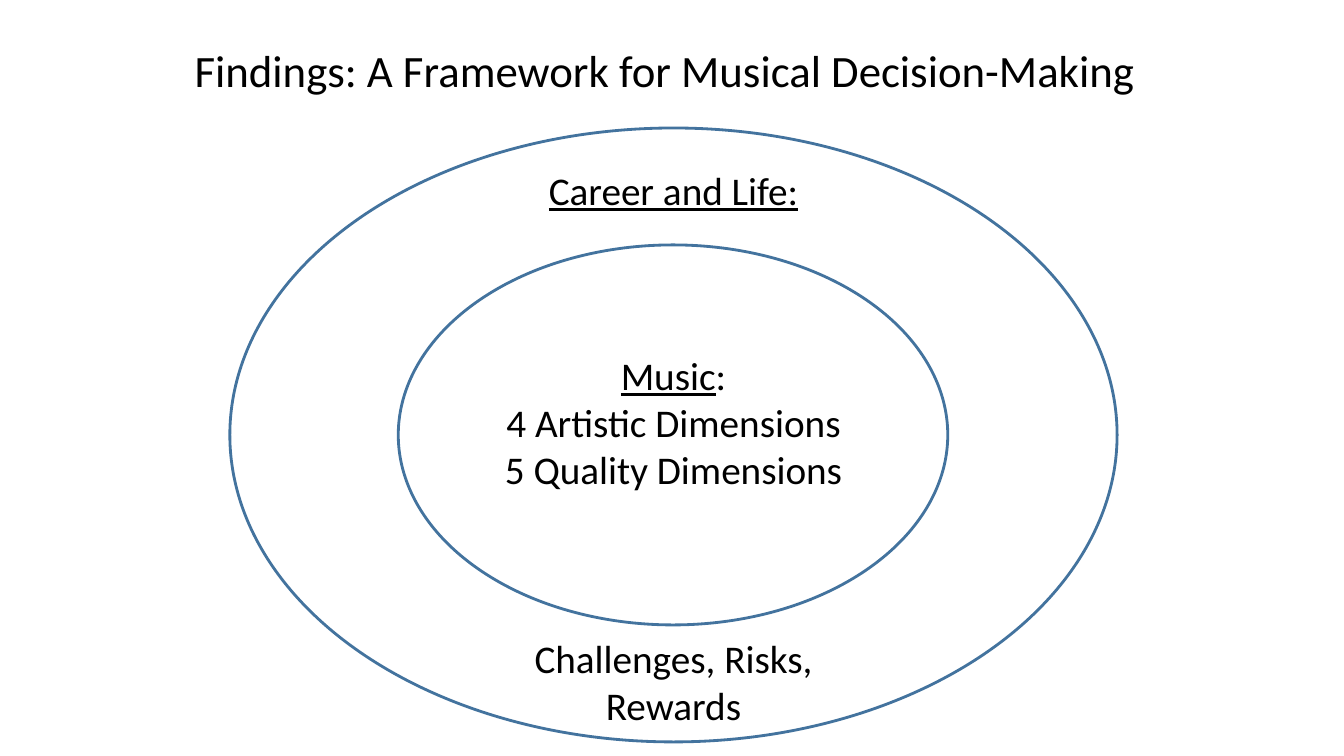
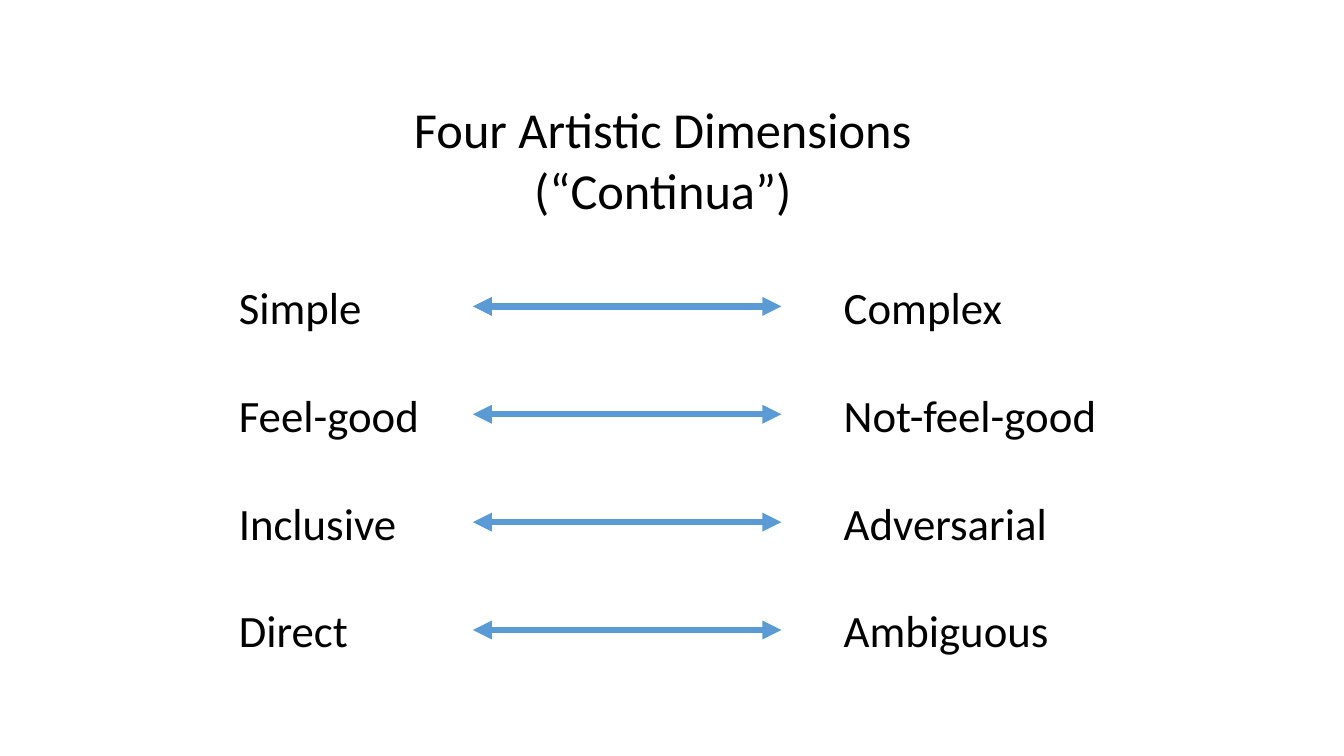
import lxml.etree
import pptx
import pptx.dml.color
import pptx.enum.shapes
import pptx.enum.text
import pptx.oxml.ns
import pptx.util

Inches = pptx.util.Inches
Pt = pptx.util.Pt
ALIGN = pptx.enum.text.PP_ALIGN

TEXT_COLOR = "000000"
OVAL_COLOR = "43739E"
ARROW_COLOR = "5B9BD5"
FONT = "Calibri"
FRAME_FORMAT = {
    "word_wrap": True,
    "auto_size": pptx.enum.text.MSO_AUTO_SIZE.NONE,
    "vertical_anchor": pptx.enum.text.MSO_ANCHOR.MIDDLE,
    "margin_left": Inches(0.1),
    "margin_right": Inches(0.1),
    "margin_top": Inches(0.05),
    "margin_bottom": Inches(0.05),
}


def color(hex_value):
    return pptx.dml.color.RGBColor.from_string(hex_value)


def apply_format(target, values):
    for name, value in values.items():
        setattr(target, name, value)


def inches(box):
    return [Inches(value) for value in box]


def write_text(shape, lines, size, alignment):
    frame = shape.text_frame
    apply_format(frame, FRAME_FORMAT)
    for index, line in enumerate(lines):
        paragraph = frame.add_paragraph() if index else frame.paragraphs[0]
        apply_format(paragraph, {"alignment": alignment, "line_spacing": 1.0})
        for text, underline in line:
            run = paragraph.add_run()
            run.text = text
            apply_format(run.font, {"name": FONT, "size": Pt(size), "underline": underline})
            run.font.color.rgb = color(TEXT_COLOR)


def add_label(slide, box, lines, size, alignment=ALIGN.CENTER):
    write_text(slide.shapes.add_textbox(*inches(box)), lines, size, alignment)


def add_titled_slide(presentation, box, lines, size, alignment):
    slide = presentation.slides.add_slide(presentation.slide_layouts[5])
    title = slide.shapes.title
    left, top, width, height = inches(box)
    apply_format(title, {"left": left, "top": top, "width": width, "height": height})
    write_text(title, [[(line, False)] for line in lines], size, alignment)
    return slide


def add_oval(slide, box):
    oval = slide.shapes.add_shape(pptx.enum.shapes.MSO_SHAPE.OVAL, *inches(box))
    oval.shadow.inherit = False
    oval.fill.background()
    oval.line.color.rgb = color(OVAL_COLOR)
    oval.line.width = Pt(2)


def add_double_arrow(slide, left, right, y):
    arrow = slide.shapes.add_connector(
        pptx.enum.shapes.MSO_CONNECTOR.STRAIGHT, *inches((left, y, right, y))
    )
    arrow.line.color.rgb = color(ARROW_COLOR)
    arrow.line.width = Pt(4.5)
    line = arrow.line._get_or_add_ln()
    for end in ("a:headEnd", "a:tailEnd"):
        lxml.etree.SubElement(line, pptx.oxml.ns.qn(end), type="triangle")
    lxml.etree.SubElement(arrow._element.spPr, pptx.oxml.ns.qn("a:effectLst"))


def add_framework(slide, box):
    left, top, width, height = box
    center = left + width / 2
    add_oval(slide, box)
    add_oval(slide, (left + 1.67, top + 1.16, 5.45, 3.77))
    labels = [
        (0.33, 0.57, [[("Career and Life:", True)]]),
        (2.16, 1.51, [
            [("Music", True), (":", False)],
            [("4 Artistic Dimensions", False)],
            [("5 Quality Dimensions", False)],
        ]),
        (4.97, 1.04, [[("Challenges, Risks,", False)], [("Rewards", False)]]),
    ]
    label_width = 4.8
    for offset, label_height, lines in labels:
        label_box = (center - label_width / 2, top + offset, label_width, label_height)
        add_label(slide, label_box, lines, 28)


def add_continua(slide, box, pairs):
    left, top, width, height = box
    row_height = 0.64
    pitch = (height - row_height) / (len(pairs) - 1)
    for index, (low, high) in enumerate(pairs):
        row_top = top + index * pitch
        for text, offset, label_width in ((low, 0, 2.4), (high, 6, width - 6)):
            label_box = (left + offset, row_top, label_width, row_height)
            add_label(slide, label_box, [[(text, False)]], 32, ALIGN.LEFT)
        add_double_arrow(slide, left + 2.42, left + 5.48, row_top + row_height / 2)


def main():
    presentation = pptx.Presentation()
    apply_format(presentation, {"slide_width": Inches(13.33), "slide_height": Inches(7.5)})

    framework_slide = add_titled_slide(
        presentation, (1.83, 0.37, 9.69, 0.64),
        ["Findings: A Framework for Musical Decision-Making"], 32, ALIGN.LEFT,
    )
    add_framework(framework_slide, (2.28, 1.27, 8.8, 6.09))

    continua_slide = add_titled_slide(
        presentation, (3.71, 0.92, 5.73, 1.31),
        ["Four Artistic Dimensions", "(“Continua”)"], 36, ALIGN.CENTER,
    )
    add_continua(continua_slide, (2.27, 2.72, 8.73, 3.85), [
        ("Simple", "Complex"),
        ("Feel-good", "Not-feel-good"),
        ("Inclusive", "Adversarial"),
        ("Direct", "Ambiguous"),
    ])

    presentation.save("out.pptx")


if __name__ == "__main__":
    main()
